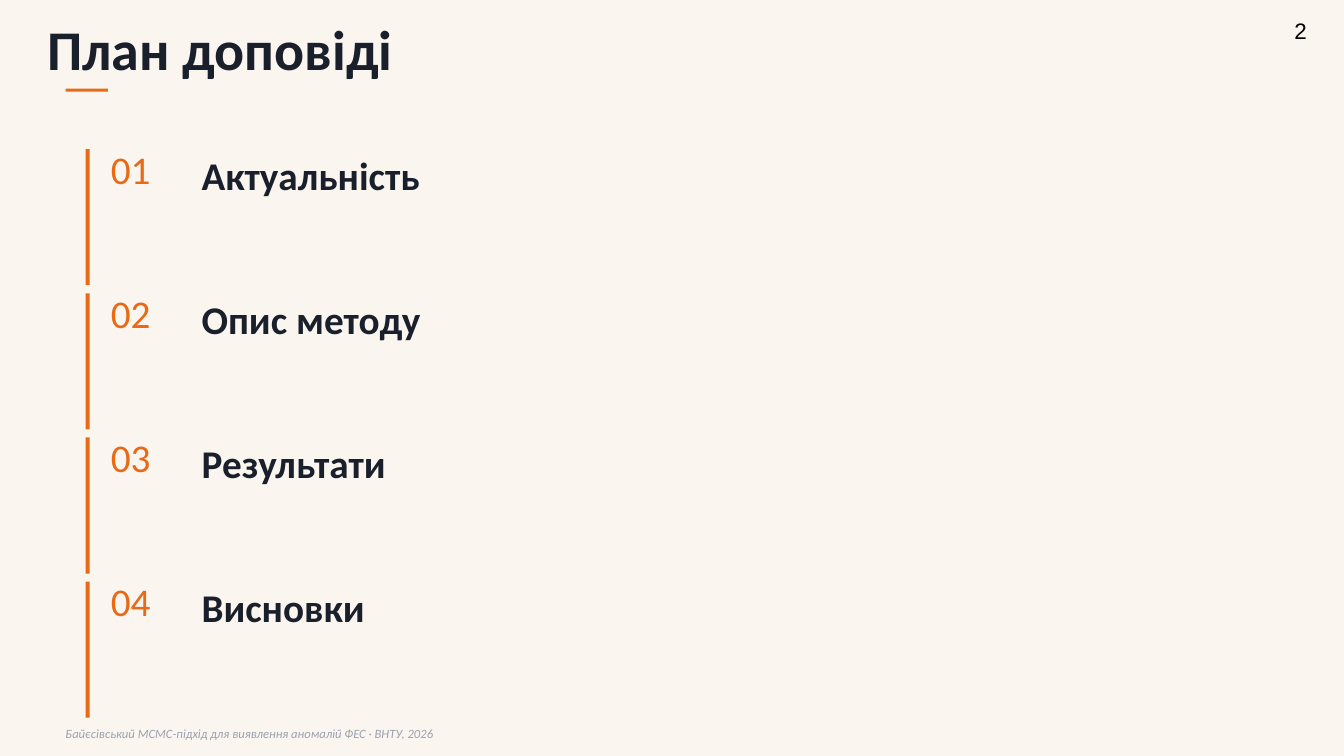
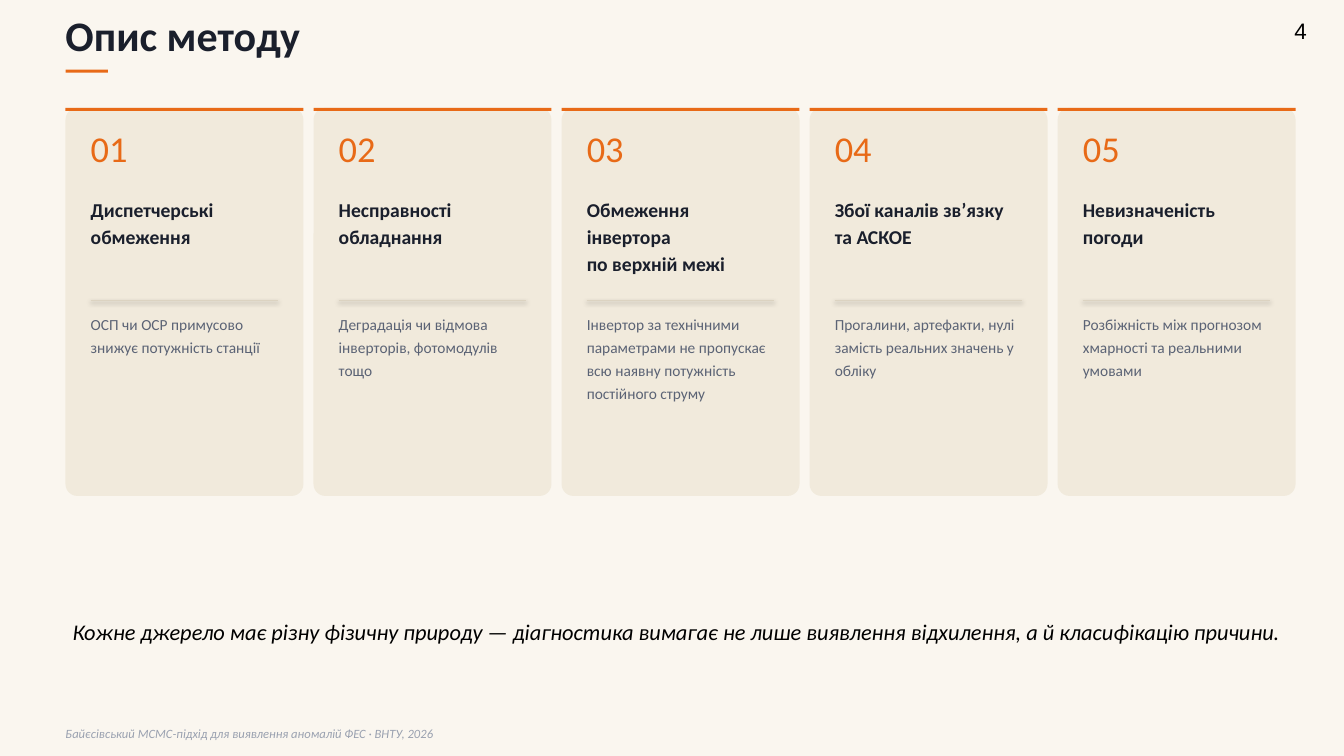
from lxml.etree import SubElement as Sub
from pptx import Presentation
from pptx.dml.color import RGBColor as Rgb
from pptx.enum.shapes import MSO_CONNECTOR as Conn, MSO_SHAPE as Kind
from pptx.enum.text import MSO_AUTO_SIZE as Auto, PP_ALIGN as Align
from pptx.oxml.ns import qn
from pptx.util import Inches, Pt

INK = {
    "paper": "FAF6EF", "dark": "1A1F2C", "accent": "E86A17", "card": "F1EADC",
    "rule": "DCD3C1", "body": "5B6375", "foot": "9AA1B0", "black": "000000",
}
FOOT = "Байєсівський MCMC-підхід для виявлення аномалій ФЕС · ВНТУ, 2026"
PLAN = ["Актуальність", "Опис методу", "Результати", "Висновки"]
CARDS = [
    ("Диспетчерські\nобмеження",
     "ОСП чи ОСР примусово знижує потужність станції"),
    ("Несправності\nобладнання",
     "Деградація чи відмова інверторів, фотомодулів тощо"),
    ("Обмеження інвертора\nпо верхній межі",
     "Інвертор за технічними параметрами не пропускає всю наявну потужність постійного струму"),
    ("Збої каналів звʼязку та АСКОЕ",
     "Прогалини, артефакти, нулі замість реальних значень у обліку"),
    ("Невизначеність\nпогоди",
     "Розбіжність між прогнозом хмарності та реальними умовами"),
]
CLAIM = ("Кожне джерело має різну фізичну природу — діагностика вимагає "
         "не лише виявлення відхилення, а й класифікацію причини.")


def write(slide, box, text, size, ink, bold=False, slant=False, lead=None,
          align=None, face="Calibri", pad=(0, 0)):
    """Add a wrapped text box in one style."""
    frame = slide.shapes.add_textbox(*map(Inches, box)).text_frame
    frame.word_wrap = True
    frame.auto_size = Auto.SHAPE_TO_FIT_TEXT
    frame.margin_left = frame.margin_right = Inches(pad[0])
    frame.margin_top = frame.margin_bottom = Inches(pad[1])
    frame.text = text
    for para in frame.paragraphs:
        para.alignment = align
        para.line_spacing = lead
        for run in para.runs:
            font = run.font
            font.name, font.size = face, Pt(size)
            font.bold, font.italic = bold, slant
            font.color.rgb = Rgb.from_string(INK[ink])


def block(slide, box, ink, kind=Kind.RECTANGLE):
    """Add a flat filled shape without an outline."""
    shape = slide.shapes.add_shape(kind, *map(Inches, box))
    shape.shadow.inherit = False
    shape.fill.solid()
    shape.fill.fore_color.rgb = Rgb.from_string(INK[ink])
    shape.line.fill.background()
    return shape


def divide(slide, left, top, width):
    """Add a thin rule with a soft shadow below it."""
    x, y, end = Inches(left), Inches(top), Inches(left + width)
    line = slide.shapes.add_connector(Conn.STRAIGHT, x, y, end, y)
    line.line.color.rgb = Rgb.from_string(INK["rule"])
    line.line.width = Pt(0.75)
    effects = Sub(line._element.spPr, qn("a:effectLst"))
    shade = Sub(effects, qn("a:outerShdw"), blurRad="40000", dist="20000",
                dir="5400000", rotWithShape="0")
    tint = Sub(shade, qn("a:srgbClr"), val=INK["black"])
    Sub(tint, qn("a:alpha"), val="38000")


def start(deck, title, page, left, top, size, dash):
    """Add a slide with the shared ground, title, dash, footer and number."""
    slide = deck.slides.add_slide(deck.slide_layouts[6])
    ground = slide.background.fill
    ground.solid()
    ground.fore_color.rgb = Rgb.from_string(INK["paper"])
    write(slide, (left, top, 12, size / 60), title, size, "dark", bold=True)
    block(slide, (0.65, dash, 0.42, 0.03), "accent")
    write(slide, (0.65, 7.2, 8, 0.3), FOOT, 9, "foot", slant=True)
    write(slide, (12.56, 0.12, 0.68, 0.37), page, 16, "black",
          align=Align.CENTER, face="Arial", pad=(0.1, 0.05))
    return slide


def row(slide, left, top, mark, label):
    """Add one plan entry: bar, number and label."""
    block(slide, (left, top, 0.04, 1.35), "accent")
    write(slide, (left + 0.25, top - 0.04, 0.8, 0.47), mark, 28, "accent")
    write(slide, (left + 1.15, top + 0.02, 4.3, 0.47), label, 28, "dark", bold=True)


def card(slide, left, top, width, mark, head, body):
    """Add one cause card with its number, heading, rule and body."""
    panel = block(slide, (left, top, width, 3.85), "card", Kind.ROUNDED_RECTANGLE)
    panel.adjustments[0] = 0.05
    block(slide, (left, top, width, 0.03), "accent")
    x, inner = left + 0.25, width - 0.5
    write(slide, (x, top + 0.18, 1.5, 0.6), mark, 26, "accent")
    write(slide, (x, top + 0.86, inner, 0.54), head, 14, "dark", bold=True, lead=1.15)
    divide(slide, x, top + 1.91, inner)
    write(slide, (x, top + 2.01, inner, 0.46), body, 11, "body", lead=1.25)


def plan(deck):
    """Build the plan slide."""
    slide = start(deck, "План доповіді", "2", 0.47, 0.14, 40, 0.88)
    for i, label in enumerate(PLAN):
        row(slide, 0.85, 1.48 + 1.43 * i, f"{i + 1:02}", label)


def method(deck):
    """Build the method slide."""
    slide = start(deck, "Опис методу", "4", 0.65, 0.09, 30, 0.69)
    width, gap = 2.36, 0.1
    for i, (head, body) in enumerate(CARDS):
        card(slide, 0.65 + (width + gap) * i, 1.07, width, f"{i + 1:02}", head, body)
    write(slide, (0.65, 6.05, 12.12, 0.35), CLAIM, 16, "black", slant=True,
          lead=1.3, align=Align.CENTER)


def main():
    """Build and save the deck."""
    deck = Presentation()
    deck.slide_width, deck.slide_height = Inches(13.33), Inches(7.5)
    plan(deck)
    method(deck)
    deck.save("out.pptx")


if __name__ == "__main__":
    main()
